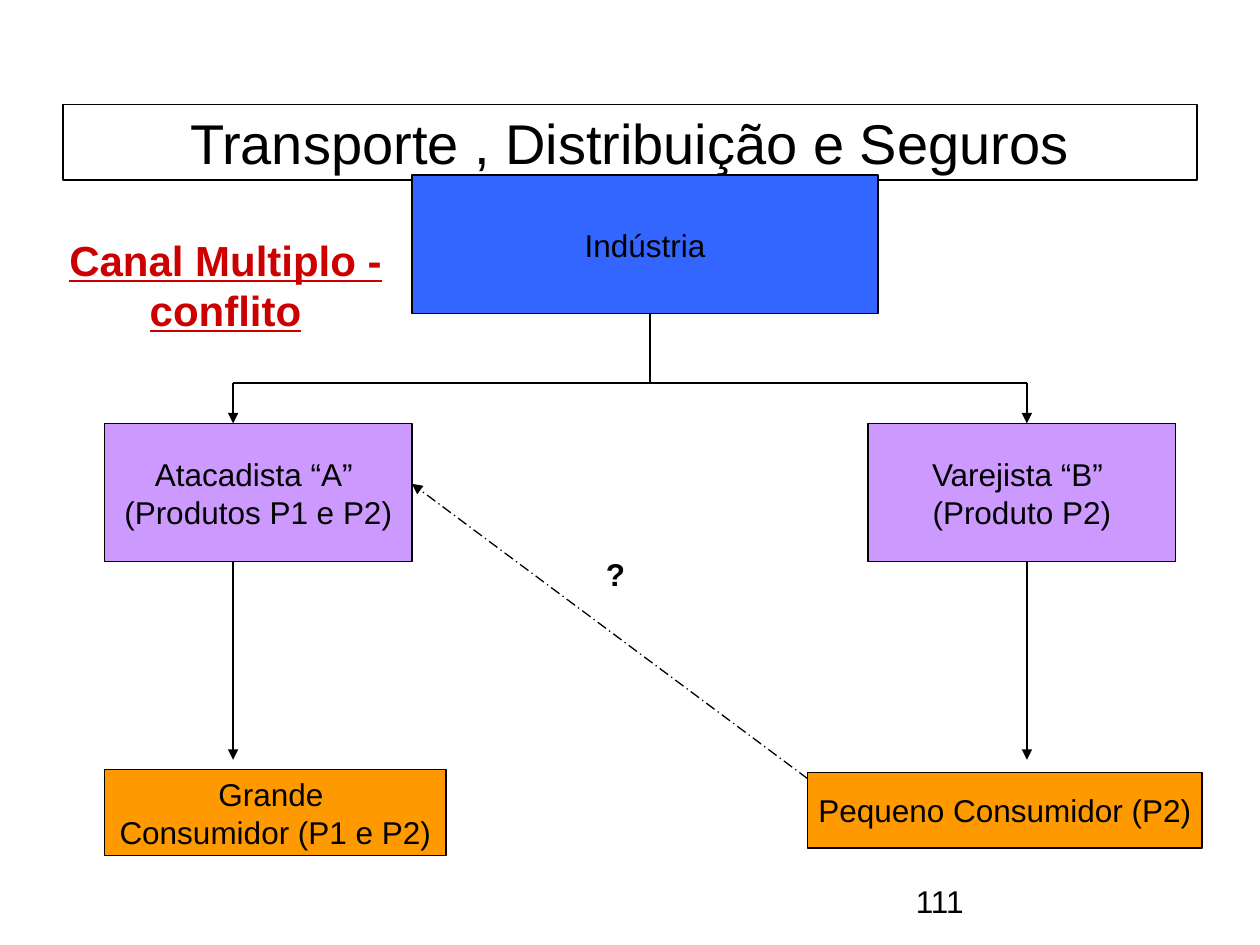
from lxml import etree
from pptx import Presentation
from pptx.dml.color import RGBColor
from pptx.enum.dml import MSO_LINE
from pptx.enum.shapes import MSO_CONNECTOR, MSO_SHAPE
from pptx.enum.text import MSO_ANCHOR, PP_ALIGN
from pptx.oxml.ns import qn
from pptx.util import Inches, Pt

RECT = MSO_SHAPE.RECTANGLE
STRAIGHT = MSO_CONNECTOR.STRAIGHT
DASH = MSO_LINE.LONG_DASH_DOT
MIDDLE = MSO_ANCHOR.MIDDLE
LEFT, CENTER = PP_ALIGN.LEFT, PP_ALIGN.CENTER

THEME = {
    "font": "Arial", "line": 0.75,
    "black": "000000", "white": "FFFFFF", "red": "CC0000",
    "blue": "3366FF", "violet": "CC99FF", "orange": "FF9900",
    "title": 32, "heading": 24, "body": 18,
}

TITLE = ["Transporte , Distribuição e Seguros"]
BOXES = [
    (["Indústria"], (3.27, 1.39, 3.7, 1.1), "blue"),
    (["Atacadista “A” ", "(Produtos P1 e P2)"], (0.83, 3.36, 2.44, 1.1), "violet"),
    (["Varejista “B” ", "(Produto P2)"], (6.89, 3.36, 2.44, 1.1), "violet"),
    (["Grande ", "Consumidor (P1 e P2)"], (0.83, 6.11, 2.71, 0.68), "orange"),
    (["Pequeno Consumidor (P2)"], (6.41, 6.13, 3.13, 0.6), "orange"),
]
LABELS = [
    (["Canal Multiplo - conflito"], (0.28, 1.81, 3.02, 0.9), CENTER, True,
     {"size": "heading", "color": "red", "bold": True, "underline": True}),
    (["?"], (4.71, 4.36, 0.35, 0.4), LEFT, False, {"bold": True}),
    (["111"], (7.17, 6.95, 2.33, 0.4), LEFT, True, {}),
]
TRUNK_X, BRANCH_XS = 5.16, (1.85, 8.15)
INDUSTRY_BOTTOM, BUS_Y, DEALER_TOP, DEALER_BOTTOM, ARROW_END = 2.49, 3.04, 3.36, 4.46, 6.03
CONFLICT = ((6.41, 6.18), (3.27, 3.84))


def rgb(name):
    return RGBColor.from_string(THEME[name])


def write(sp, lines, align, wrap, size="body", color="black", **fmt):
    tf = sp.text_frame
    tf.word_wrap = wrap
    font = {"name": THEME["font"], "size": Pt(THEME[size]), **fmt}
    for i, text in enumerate(lines):
        p = tf.add_paragraph() if i else tf.paragraphs[0]
        p.alignment = align
        r = p.add_run()
        r.text = text
        r.font.color.rgb = rgb(color)
        for key, value in font.items():
            setattr(r.font, key, value)


def add_box(s, lines, at, fill, wrap=False, size="body"):
    sp = s.shapes.add_shape(RECT, *map(Inches, at))
    sp.shadow.inherit = False
    sp.fill.solid()
    sp.fill.fore_color.rgb = rgb(fill)
    sp.line.color.rgb = rgb("black")
    sp.line.width = Pt(THEME["line"])
    sp.text_frame.vertical_anchor = MIDDLE
    write(sp, lines, CENTER, wrap, size)


def add_line(s, start, end, arrow=False, dash=None):
    cn = s.shapes.add_connector(STRAIGHT, *map(Inches, start + end))
    cn.line.color.rgb = rgb("black")
    cn.line.width = Pt(THEME["line"])
    if dash:
        cn.line.dash_style = dash
    if arrow:
        etree.SubElement(cn.line._get_or_add_ln(), qn("a:tailEnd"), type="triangle")
    etree.SubElement(cn._element.spPr, qn("a:effectLst"))


def main():
    """Build the multiple-channel conflict slide."""
    prs = Presentation()
    prs.slide_width, prs.slide_height = Inches(10), Inches(7.5)
    s = prs.slides.add_slide(prs.slide_layouts[6])
    add_box(s, TITLE, (0.5, 0.83, 9, 0.6), "white", True, "title")
    for box in BOXES:
        add_box(s, *box)
    for lines, at, align, wrap, fmt in LABELS:
        write(s.shapes.add_textbox(*map(Inches, at)), lines, align, wrap, **fmt)
    add_line(s, (TRUNK_X, INDUSTRY_BOTTOM), (TRUNK_X, BUS_Y))
    add_line(s, *((x, BUS_Y) for x in BRANCH_XS))
    for x in BRANCH_XS:
        add_line(s, (x, BUS_Y), (x, DEALER_TOP), arrow=True)
        add_line(s, (x, DEALER_BOTTOM), (x, ARROW_END), arrow=True)
    add_line(s, *CONFLICT, arrow=True, dash=DASH)
    prs.save("out.pptx")


if __name__ == "__main__":
    main()
